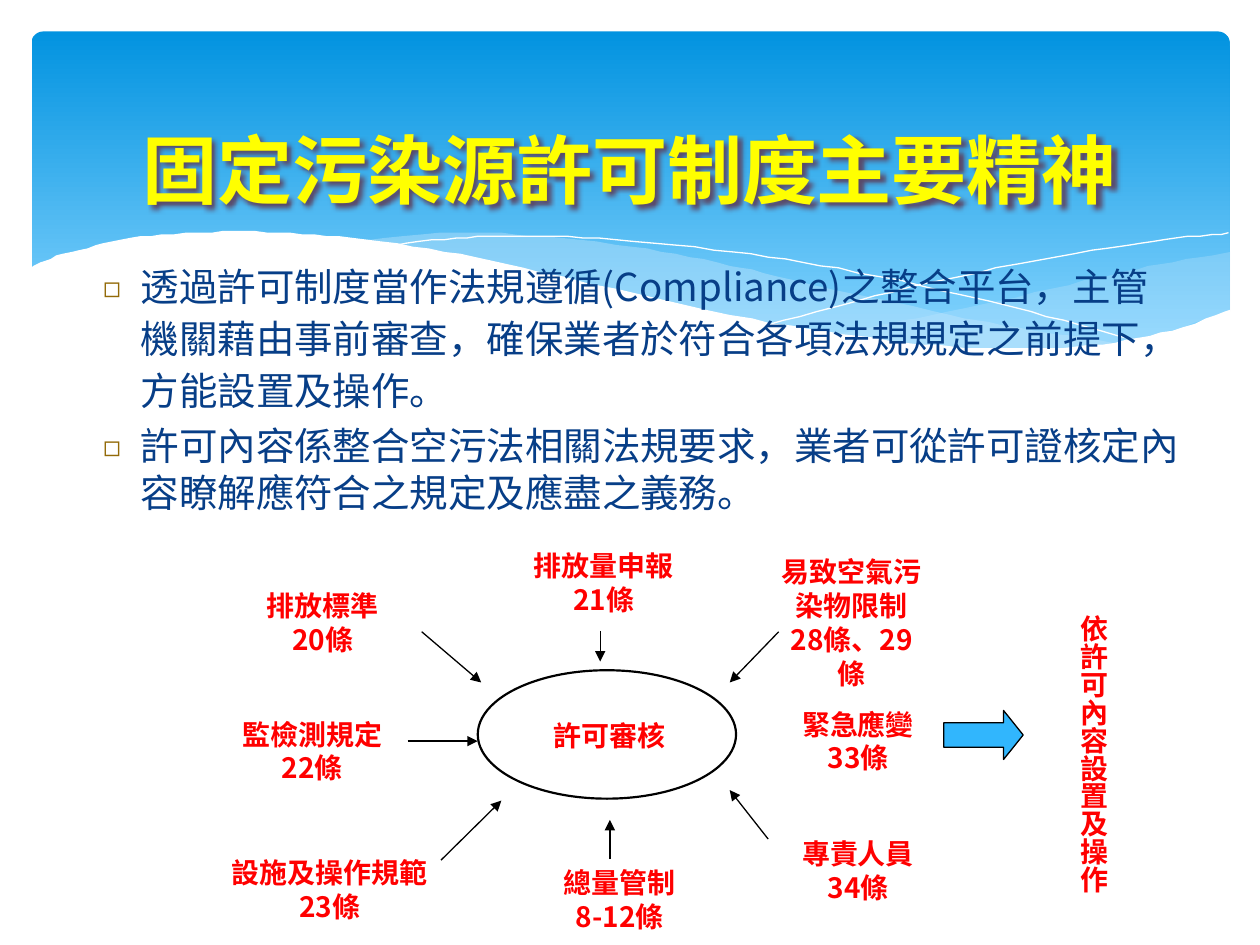
import dataclasses

import pptx
import pptx.dml.color
import pptx.enum.shapes
import pptx.enum.text
import pptx.oxml
import pptx.oxml.ns
import pptx.util
from lxml import etree

Pt = pptx.util.Pt
SHAPE = pptx.enum.shapes.MSO_SHAPE
ALIGN = pptx.enum.text.PP_ALIGN
ANCHOR = pptx.enum.text.MSO_ANCHOR
qn = pptx.oxml.ns.qn


@dataclasses.dataclass(frozen=True)
class Theme:
    font: str = "Noto Sans CJK SC"
    sky_top: str = "0293E0"
    sky_bottom: str = "83D3FE"
    mist: str = "C6E7FC"
    white: str = "FFFFFF"
    black: str = "000000"
    title: str = "FFFF00"
    title_shadow: str = "5A4A6A"
    body: str = "073E87"
    bullet: str = "936A08"
    label: str = "FF0000"
    arrow: str = "31B6FD"
    title_size: float = 42.9
    body_size: float = 22
    label_size: float = 16
    body_leading: float = 27
    label_leading: float = 19.4


def rgb(code):
    return pptx.dml.color.RGBColor.from_string(code)


def smooth(points, steps=6):
    """Catmull-Rom curve through the points."""
    padded = [points[0], *points, points[-1]]
    curve = [points[0]]
    for a, b, c, d in zip(padded, padded[1:], padded[2:], padded[3:]):
        for step in range(1, steps + 1):
            t = step / steps
            curve.append(tuple(
                (2 * q + (r - p) * t + (2 * p - 5 * q + 4 * r - s) * t**2
                 + (3 * q - p - 3 * r + s) * t**3) / 2
                for p, q, r, s in zip(a, b, c, d)))
    return curve


class Painter:
    def __init__(self, page, theme):
        self.page = page
        self.theme = theme

    def shape(self, kind, left, top, width, height, fill=None, line=None):
        shape = self.page.shapes.add_shape(kind, Pt(left), Pt(top), Pt(width), Pt(height))
        self.paint(shape, fill, line)
        return shape

    def paint(self, shape, fill=None, line=None, weight=0.75, opacity=None):
        shape.shadow.inherit = False
        if fill:
            shape.fill.solid()
            shape.fill.fore_color.rgb = rgb(fill)
            if opacity:
                color = shape.fill._xPr.find(".//" + qn("a:srgbClr"))
                etree.SubElement(color, qn("a:alpha"), val=str(opacity * 1000))
        else:
            shape.fill.background()
        if line:
            shape.line.color.rgb = rgb(line)
            shape.line.width = Pt(weight)
        else:
            shape.line.fill.background()

    def outline(self, points, close=True, **paint):
        builder = self.page.shapes.build_freeform(*points[0], scale=float(Pt(1)))
        builder.add_line_segments(points[1:], close=close)
        self.paint(builder.convert_to_shape(), **paint)

    def banner(self):
        banner = self.shape(SHAPE.ROUNDED_RECTANGLE, 18, 18, 684.7, 194.4)
        banner.adjustments[0] = 0.034
        banner.fill.gradient()
        banner.fill.gradient_angle = 270
        first, last = banner.fill.gradient_stops
        first.color.rgb, last.color.rgb = rgb(self.theme.sky_top), rgb(self.theme.sky_bottom)
        first.position, last.position = 0, 0.9

    def text(self, lines, left, top, width, height, size, color, bold=False,
             align=ALIGN.CENTER, leading=None, wrap=True):
        box = self.page.shapes.add_textbox(Pt(left), Pt(top), Pt(width), Pt(height))
        frame = box.text_frame
        frame.text = "\n".join(lines)
        frame.word_wrap = wrap
        for para in frame.paragraphs:
            para.alignment = align
            if leading:
                para.line_spacing = Pt(leading)
            for span in para.runs:
                span.font.name = self.theme.font
                span.font.size = Pt(size)
                span.font.bold = bold
                span.font.color.rgb = rgb(color)
                etree.SubElement(span.font._element, qn("a:ea"), typeface=self.theme.font)
        return box

    def title(self, words):
        theme = self.theme
        box = self.text([words], 36, 46.8, 648, 98.6, theme.title_size, theme.title, bold=True)
        box.text_frame.vertical_anchor = ANCHOR.MIDDLE
        box.shadow.inherit = False
        effects = box._element.spPr.find(qn("a:effectLst"))
        shadow = etree.SubElement(effects, qn("a:outerShdw"), blurRad=str(Pt(3)),
                                  dist=str(Pt(2.5)), dir="2700000", algn="tl")
        etree.SubElement(shadow, qn("a:srgbClr"), val=theme.title_shadow)

    def bullets(self, lines):
        theme = self.theme
        box = self.text(lines, 21.6, 143.3, 661.7, 144, theme.body_size, theme.body,
                        align=ALIGN.LEFT, leading=theme.body_leading)
        first, second = box.text_frame.paragraphs
        first.line_spacing = Pt(theme.body_leading * 1.1)
        second.space_before = Pt(theme.body_size * 0.2)
        for para in (first, second):
            props = para._p.get_or_add_pPr()
            props.set("marL", str(Pt(51.8)))
            props.set("indent", str(Pt(-21.6)))
            color = etree.SubElement(props, qn("a:buClr"))
            etree.SubElement(color, qn("a:srgbClr"), val=theme.bullet)
            etree.SubElement(props, qn("a:buSzPct"), val="75000")
            etree.SubElement(props, qn("a:buFont"), typeface=theme.font)
            etree.SubElement(props, qn("a:buChar"), char="◻")

    def label(self, lines, left, top, width, wrap=False):
        theme = self.theme
        height = 7.2 + len(lines) * theme.label_leading
        return self.text(lines, left, top, width, height, theme.label_size, theme.label,
                         bold=True, leading=theme.label_leading, wrap=wrap)

    def vertical_label(self, words, left, top, width, height):
        box = self.text([words], left, top, width, height, self.theme.label_size,
                        self.theme.label, bold=True, align=ALIGN.LEFT)
        box.text_frame._txBody.bodyPr.set("vert", "eaVert")

    def arrow(self, x1, y1, x2, y2):
        line = self.page.shapes.add_connector(
            pptx.enum.shapes.MSO_CONNECTOR.STRAIGHT, Pt(x1), Pt(y1), Pt(x2), Pt(y2))
        line.line.color.rgb = rgb(self.theme.black)
        line.line.width = Pt(0.75)
        etree.SubElement(line.line._get_or_add_ln(), qn("a:tailEnd"), type="triangle")
        etree.SubElement(line._element.spPr, qn("a:effectLst"))


RIGHT_WAVE_TOP = [(702.7, 144), (663, 151), (620, 160.5), (561, 174), (508, 185), (476, 191)]
RIGHT_WAVE_BASE = [(476, 191), (518, 196), (554, 199.4), (593, 199.4), (634, 196.6),
                   (668, 189.4), (702.7, 177.8)]
MIDDLE_WAVE_TOP = [(643, 196.6), (581, 187), (533.5, 178), (453, 160), (410, 150), (361, 141),
                   (302, 134.6), (260, 133), (206, 137.5)]
MIDDLE_WAVE_BASE = [(206, 137.5), (260.6, 146), (323, 160), (381.6, 173), (445, 186),
                    (500, 194.4), (556.6, 199.4), (596, 200), (643, 196.6)]
LONG_CREST = [(222.5, 140.4), (261, 136), (299.5, 134.6), (352, 136.8), (419, 144), (479, 153.4),
              (547, 168), (598, 180.7), (653, 195.8)]
SHORT_CREST = [(441.4, 185), (500.4, 169), (558.7, 155.5), (623.5, 143.3), (665, 136.8),
               (702, 133.2)]
FRONT_WAVE = [(703.4, 177), (669.6, 188.6), (630, 196.6), (582.5, 199.4), (535.7, 197.3),
              (481, 190.8), (417, 180), (322, 158.4), (263, 145.4), (210, 136.8), (165.6, 133.2),
              (127.4, 132.5), (85.7, 134.6), (54.7, 140.4), (28.8, 147.6), (16.6, 153.4)]

ARTICLES = [
    (["排放標準", "20條"], 144.7, 332.6, 79.2),
    (["設施及操作規範", "23條"], 124.6, 485.3, 127.4),
    (["監檢測規定", "22條"], 131, 406, 95),
    (["排放量申報", "21條"], 297.4, 309.6, 95),
    (["緊急應變", "33條"], 450.7, 400.3, 79.2),
    (["總量管制", "8-12條"], 314.6, 491, 79.2),
    (["專責人員", "34條"], 450.7, 474.5, 79.2),
]
ARROWS = [
    (241, 361, 275, 390), (233, 423.5, 273, 423.5), (252, 491.5, 286.5, 457.5),
    (348.5, 491, 348.5, 468.5), (343, 360.5, 343, 378), (445, 361, 417, 390),
    (439, 479.5, 417, 451.5),
]


def main():
    deck = pptx.Presentation()
    deck.slide_width, deck.slide_height = Pt(720), Pt(540)
    theme = Theme()
    painter = Painter(deck.slides.add_slide(deck.slide_layouts[6]), theme)

    painter.banner()
    painter.outline(smooth(RIGHT_WAVE_TOP) + smooth(RIGHT_WAVE_BASE), fill=theme.mist, opacity=29)
    painter.outline(smooth(MIDDLE_WAVE_TOP) + smooth(MIDDLE_WAVE_BASE), fill=theme.mist, opacity=40)
    for crest in (LONG_CREST, SHORT_CREST):
        painter.outline(smooth(crest), close=False, line=theme.white, weight=0)
    painter.outline(smooth(FRONT_WAVE) + [(16.6, 237), (703.4, 237)], fill=theme.white)

    painter.bullets([
        "透過許可制度當作法規遵循(Compliance)之整合平台，主管機關藉由事前審查，"
        "確保業者於符合各項法規規定之前提下，方能設置及操作。",
        "許可內容係整合空污法相關法規要求，業者可從許可證核定內容瞭解應符合之規定及應盡之義務。",
    ])
    painter.title("固定污染源許可制度主要精神")

    review = painter.shape(SHAPE.OVAL, 273, 383, 147.6, 73.4, line=theme.black)
    review.line.width = Pt(1.25)
    painter.label(["許可審核"], 308.9, 406.8, 79.2)
    for article in ARTICLES:
        painter.label(*article)
    painter.label(["易致空氣污", "染物限制", "28條、29條"], 439.2, 313.2, 95, wrap=True)
    for ends in ARROWS:
        painter.arrow(*ends)
    outcome = painter.shape(SHAPE.RIGHT_ARROW, 539.3, 406, 45.4, 28, theme.arrow, theme.black)
    outcome.adjustments[1] = 0.4
    painter.vertical_label("依許可內容設置及操作", 604, 344.2, 33.8, 181.4)

    deck.save("out.pptx")


if __name__ == "__main__":
    main()
